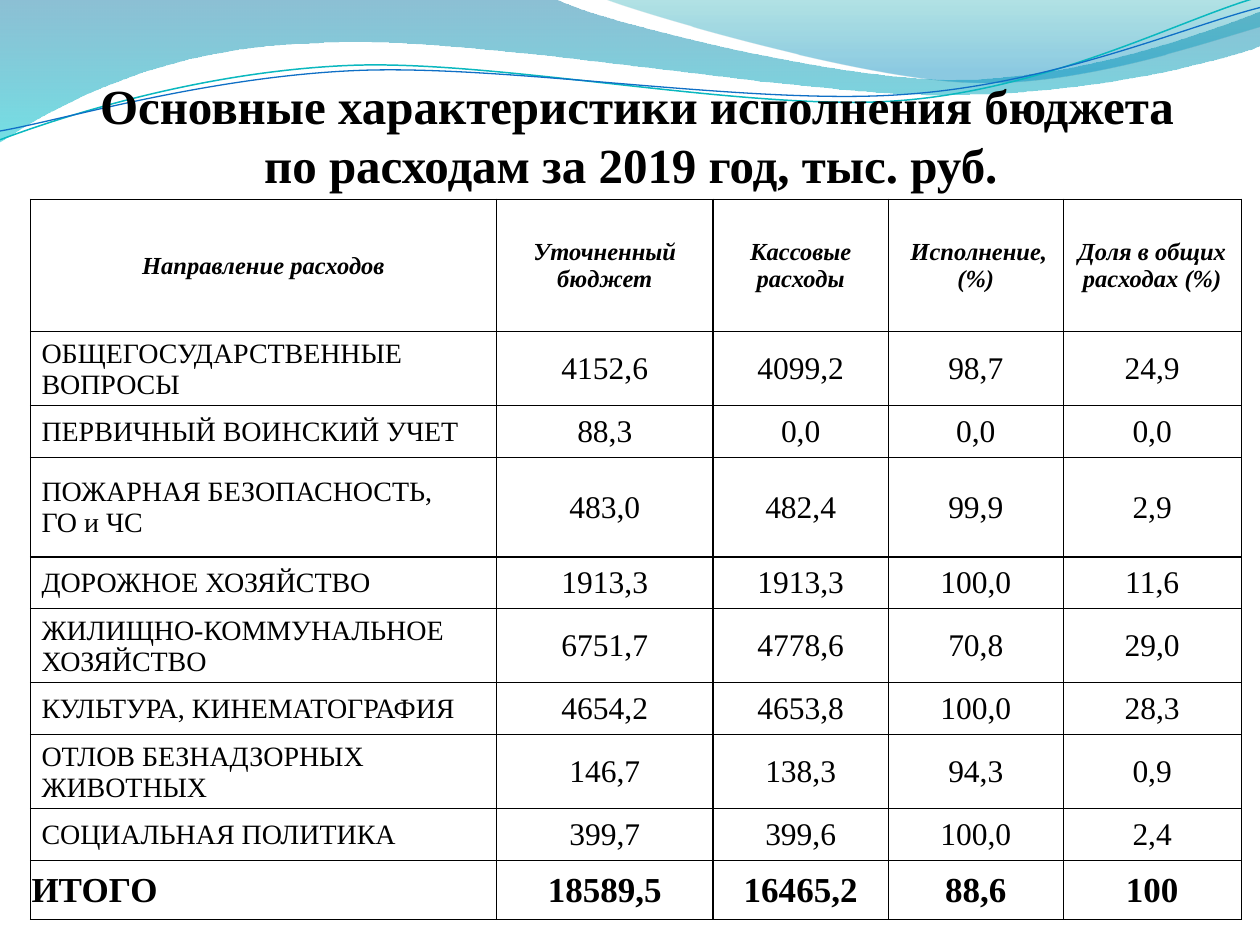
from dataclasses import dataclass

import pptx
import pptx.dml.color
import pptx.enum.text
import pptx.oxml
import pptx.oxml.ns
import pptx.util
from pptx.util import Inches


@dataclass(frozen=True)
class Theme:
    font: str = "Times New Roman"
    ink: str = "000000"
    teal_line: str = "0AB8BF"
    blue_line: str = "0F6FC6"
    # Gradient stops: position, colour, opacity in percent
    left_wave: tuple = ((0, "0074A1", 45), (1, "00C6CF", 55))
    right_wave: tuple = ((0, "00A1A9", 30), (0.8, "008BBF", 45))
    title_size: int = 28
    header_size: int = 14
    label_size: int = 16
    value_size: int = 18
    total_size: int = 20
    thin: float = 0.5
    thick: float = 1


THEME = Theme()
ALIGN = pptx.enum.text.PP_ALIGN
ANCHOR = pptx.enum.text.MSO_ANCHOR

TITLE = " Основные характеристики исполнения бюджета \vпо расходам за 2019 год, тыс. руб. "
COLUMN_WIDTHS = [3.7, 1.72, 1.39, 1.39, 1.41]
ROW_HEIGHTS = [1.05, 0.59, 0.41, 0.79, 0.41, 0.59, 0.41, 0.59, 0.41, 0.47]
THICK_ROW_EDGE = 4
BUDGET = [
    ["Направление расходов", "Уточненный бюджет", "Кассовые расходы",
     " Исполнение, (%)", "Доля в общих расходах (%)"],
    ["ОБЩЕГОСУДАРСТВЕННЫЕ ВОПРОСЫ", "4152,6", "4099,2", "98,7", "24,9"],
    ["ПЕРВИЧНЫЙ ВОИНСКИЙ УЧЕТ", "88,3", "0,0", "0,0", "0,0"],
    ["ПОЖАРНАЯ БЕЗОПАСНОСТЬ,\nГО и ЧС", "483,0", "482,4", "99,9", "2,9"],
    ["ДОРОЖНОЕ ХОЗЯЙСТВО", "1913,3", "1913,3", "100,0", "11,6"],
    ["ЖИЛИЩНО-КОММУНАЛЬНОЕ ХОЗЯЙСТВО", "6751,7", "4778,6", "70,8", "29,0"],
    ["КУЛЬТУРА, КИНЕМАТОГРАФИЯ", "4654,2", "4653,8", "100,0", "28,3"],
    ["ОТЛОВ БЕЗНАДЗОРНЫХ ЖИВОТНЫХ", "146,7", "138,3", "94,3", "0,9"],
    ["СОЦИАЛЬНАЯ ПОЛИТИКА", "399,7", "399,6", "100,0", "2,4"],
    ["ИТОГО", "18589,5", "16465,2", "88,6", "100"],
]

# Each segment is one point for a straight line or three points for a cubic curve.
LEFT_WAVE = [
    [(0, 0)], [(4.4, -0.01)],
    [(4.76, 0.17), (6.64, 0.63), (7.58, 0.63)],
    [(8.53, 0.63), (9.58, 0.26), (10, 0.09)], [(10.01, 0.36)],
    [(9.83, 0.44), (8.7, 0.76), (7.46, 0.75)],
    [(6.22, 0.75), (3.82, 0.28), (2.57, 0.34)],
    [(1.29, 0.36), (0.46, 0.83), (-0.01, 1.13)],
]
RIGHT_WAVE = [
    [(4.79, -0.01)],
    [(5.09, 0.11), (6.82, 0.62), (7.69, 0.65)],
    [(8.56, 0.69), (9.61, 0.32), (10, 0.21)], [(10, 0)],
]
TEAL_CURVE = [
    [(0, 1.11)],
    [(0.48, 0.93), (1.58, 0.57), (2.77, 0.52)],
    [(3.95, 0.47), (5.93, 0.89), (7.13, 0.8)],
    [(8.33, 0.71), (9.38, 0.15), (9.98, -0.02)],
]
BLUE_CURVE = [
    [(0, 1.04)],
    [(0.47, 0.96), (1.64, 0.61), (2.83, 0.56)],
    [(4.03, 0.51), (5.97, 0.84), (7.17, 0.75)],
    [(8.36, 0.67), (9.41, 0.21), (10, 0.06)],
]


def rgb(colour):
    return pptx.dml.color.RGBColor.from_string(colour)


def bend_segments(shape, segments):
    """Join the straight steps of each three-point segment into one cubic curve."""
    drawing = shape.element.spPr.find(".//" + pptx.oxml.ns.qn("a:path"))
    steps = iter(list(drawing))
    for segment in segments:
        group = [next(steps) for _ in segment]
        if len(group) == 3:
            curve = pptx.oxml.parse_xml(
                f'<a:cubicBezTo {pptx.oxml.ns.nsdecls("a")}/>')
            group[0].addprevious(curve)
            for step in group:
                curve.append(step[0])
                drawing.remove(step)


def add_outline(slide, segments, close):
    start, *rest = [(Inches(x), Inches(y)) for segment in segments for x, y in segment]
    builder = slide.shapes.build_freeform(*start)
    builder.add_line_segments(rest, close=close)
    shape = builder.convert_to_shape()
    bend_segments(shape, segments)
    shape.shadow.inherit = False
    return shape


def add_wave(slide, segments, stops):
    shape = add_outline(slide, segments, close=True)
    shape.line.fill.background()
    shape.fill.gradient()
    shape.fill.gradient_angle = 270
    for stop, (position, colour, opacity) in zip(shape.fill.gradient_stops, stops):
        stop.position = position
        stop.color.rgb = rgb(colour)
    colours = shape.element.spPr.findall(".//" + pptx.oxml.ns.qn("a:srgbClr"))
    for element, (position, colour, opacity) in zip(colours, stops):
        element.append(pptx.oxml.parse_xml(
            f'<a:alpha {pptx.oxml.ns.nsdecls("a")} val="{opacity * 1000}"/>'))


def add_curve(slide, segments, colour, width):
    shape = add_outline(slide, segments, close=False)
    shape.fill.background()
    shape.line.color.rgb = rgb(colour)
    shape.line.width = pptx.util.Pt(width)


def format_paragraph(paragraph, size, bold, italic=False, alignment=ALIGN.CENTER):
    paragraph.alignment = alignment
    font = paragraph.font
    font.name = THEME.font
    font.size = pptx.util.Pt(size)
    font.bold = bold
    font.italic = italic
    font.color.rgb = rgb(THEME.ink)


def place_title(slide):
    title = slide.shapes.title
    title.left, title.top = Inches(0.47), Inches(0.55)
    title.width, title.height = Inches(9.17), Inches(1.02)
    frame = title.text_frame
    frame.text = TITLE
    frame.word_wrap = True
    frame.auto_size = pptx.enum.text.MSO_AUTO_SIZE.NONE
    frame.vertical_anchor = ANCHOR.TOP
    format_paragraph(frame.paragraphs[0], THEME.title_size, bold=True)
    title.element.getparent().append(title.element)  # bring to front


def set_borders(cell, row, column):
    """Thick lines between value columns and at one row edge, thin elsewhere."""
    def vertical(edge):
        return THEME.thick if 2 <= edge < len(COLUMN_WIDTHS) else THEME.thin

    def horizontal(edge):
        return THEME.thick if edge == THICK_ROW_EDGE else THEME.thin

    widths = {"L": vertical(column), "R": vertical(column + 1),
              "T": horizontal(row), "B": horizontal(row + 1)}
    properties = cell._tc.get_or_add_tcPr()
    for side, width in widths.items():
        properties.append(pptx.oxml.parse_xml(
            f'<a:ln{side} {pptx.oxml.ns.nsdecls("a")} w="{pptx.util.Pt(width)}">'
            f'<a:solidFill><a:srgbClr val="{THEME.ink}"/></a:solidFill></a:ln{side}>'))


def fill_cell(cell, row, column):
    header, total = row == 0, row == len(BUDGET) - 1
    label = column == 0 and not header
    cell.text = BUDGET[row][column]
    cell.vertical_anchor = ANCHOR.MIDDLE
    cell.margin_left = cell.margin_right = cell.margin_top = Inches(0.01)
    cell.margin_bottom = 0
    set_borders(cell, row, column)
    cell.fill.background()
    if header:
        size = THEME.header_size
    elif total:
        size = THEME.total_size
    else:
        size = THEME.label_size if label else THEME.value_size
    for paragraph in cell.text_frame.paragraphs:
        format_paragraph(paragraph, size, bold=header or total, italic=header,
                         alignment=ALIGN.LEFT if label else ALIGN.CENTER)
        if label and not total:
            paragraph._p.get_or_add_pPr().set("marL", str(Inches(0.08)))


def add_budget_table(slide):
    frame = slide.shapes.add_table(
        len(ROW_HEIGHTS), len(COLUMN_WIDTHS), Inches(0.24), Inches(1.58),
        Inches(sum(COLUMN_WIDTHS)), Inches(sum(ROW_HEIGHTS)))
    table = frame.table
    table.first_row = table.horz_banding = False
    for column, width in zip(table.columns, COLUMN_WIDTHS):
        column.width = Inches(width)
    for row, height in enumerate(ROW_HEIGHTS):
        table.rows[row].height = Inches(height)
        for column in range(len(COLUMN_WIDTHS)):
            fill_cell(table.cell(row, column), row, column)


def main():
    presentation = pptx.Presentation()
    presentation.slide_width, presentation.slide_height = Inches(10), Inches(7.5)
    slide = presentation.slides.add_slide(presentation.slide_layouts[5])
    add_wave(slide, LEFT_WAVE, THEME.left_wave)
    add_wave(slide, RIGHT_WAVE, THEME.right_wave)
    add_curve(slide, TEAL_CURVE, THEME.teal_line, 0.85)
    add_curve(slide, BLUE_CURVE, THEME.blue_line, 0.75)
    add_budget_table(slide)
    place_title(slide)
    presentation.save("out.pptx")


if __name__ == "__main__":
    main()
